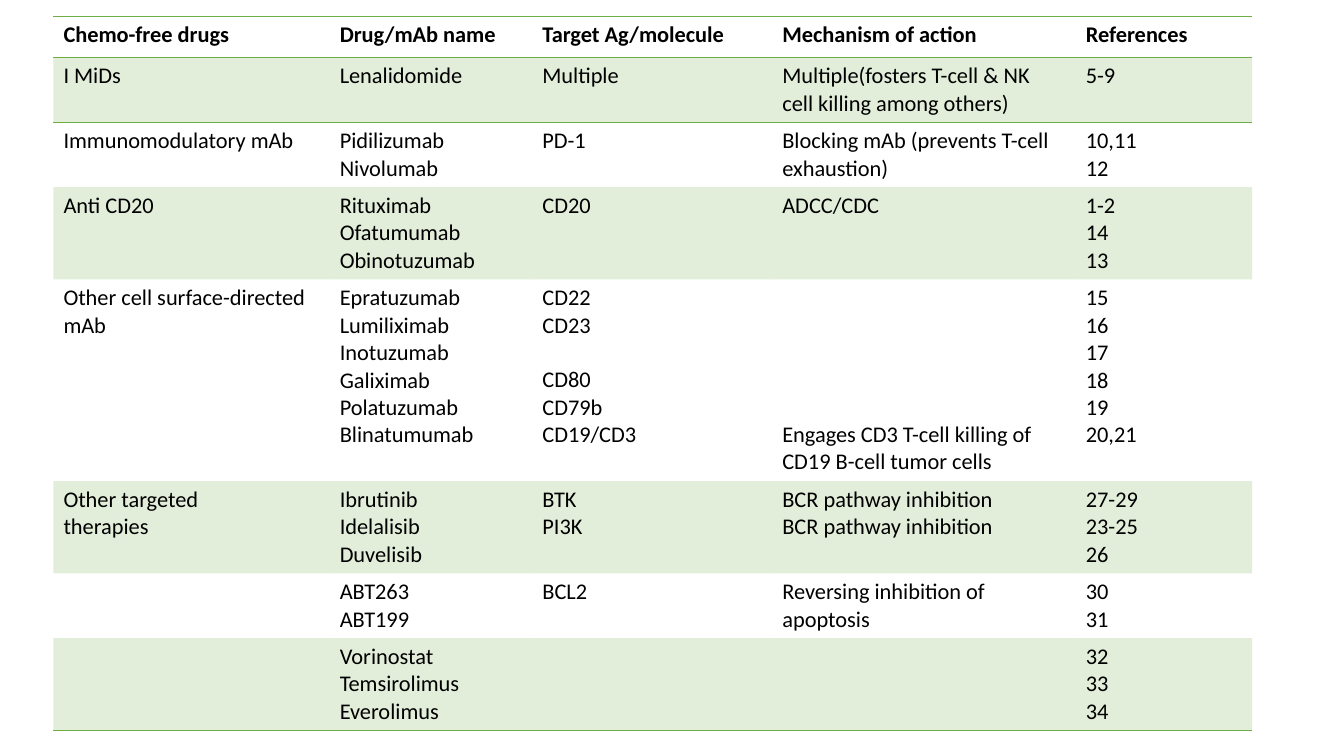
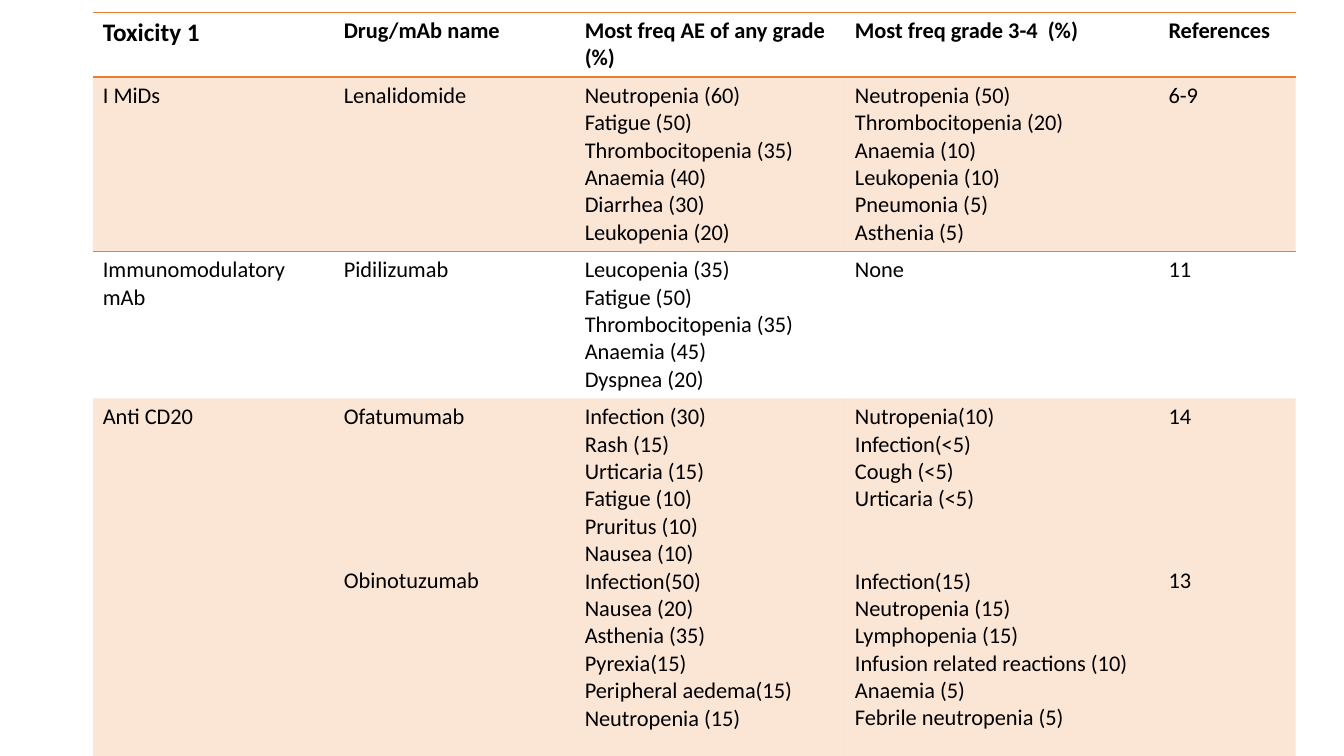
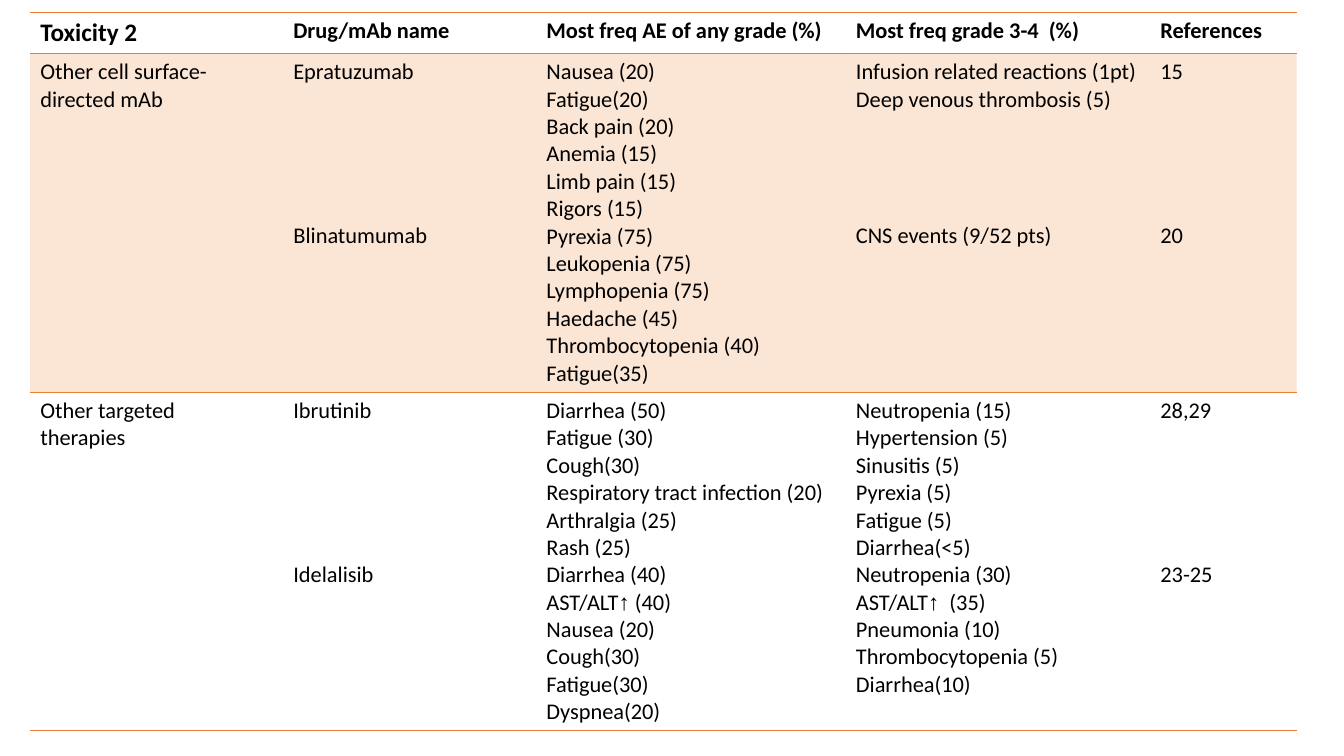
from dataclasses import dataclass

from lxml import etree
from pptx import Presentation
from pptx.dml.color import RGBColor
from pptx.oxml.ns import qn
from pptx.util import Inches, Pt


@dataclass(frozen=True)
class Theme:
    text: str = "000000"
    green: str = "70AD47"
    orange: str = "ED7D31"
    band_alpha: int = 20000
    font: str = "Calibri"
    arrow_font: str = "Arial"
    body_size: int = 16
    heading_size: int = 18
    line_pitch: float = 19.53
    rule_width: int = 1
    cell_margin: float = 0.05
    min_row: float = 0.41
    plain_style: str = "{2D5ABB26-0587-4C30-8999-92F81FD0307C}"


THEME = Theme()
ARROW = "↑"

# Each row is (lines tall, cells); a number inside a cell skips that many lines.
DRUGS = [
    (1, ["Chemo-free drugs", "Drug/mAb name", "Target Ag/molecule",
         "Mechanism of action", "References"]),
    (2, ["I MiDs", "Lenalidomide", "Multiple",
         "Multiple(fosters T-cell & NK cell killing among others)", "5-9"]),
    (2, ["Immunomodulatory mAb", ("Pidilizumab", "Nivolumab"), "PD-1",
         "Blocking mAb (prevents T-cell exhaustion)", ("10,11", "12")]),
    (3, ["Anti CD20", ("Rituximab", "Ofatumumab", "Obinotuzumab"), "CD20",
         "ADCC/CDC", ("1-2", "14", "13")]),
    (7, ["Other cell surface-directed mAb",
         ("Epratuzumab", "Lumiliximab", "Inotuzumab", "Galiximab",
          "Polatuzumab", "Blinatumumab"),
         ("CD22", "CD23", 1, "CD80", "CD79b", "CD19/CD3"),
         (5, "Engages CD3 T-cell killing of CD19 B-cell tumor cells"),
         ("15", "16", "17", "18", "19", "20,21")]),
    (3, [("Other targeted", "therapies"), ("Ibrutinib", "Idelalisib", "Duvelisib"),
         ("BTK", "PI3K"), ("BCR pathway inhibition", "BCR pathway inhibition"),
         ("27-29", "23-25", "26")]),
    (2, ["", ("ABT263", "ABT199"), "BCL2",
         ("Reversing inhibition of", "apoptosis"), ("30", "31")]),
    (3, ["", ("Vorinostat", "Temsirolimus", "Everolimus"), "", "",
         ("32", "33", "34")]),
]

TOXICITY_HEADINGS = ["Drug/mAb name", "Most freq AE of any grade (%)",
                     "Most freq grade 3-4  (%)", "References"]

TOXICITY_1 = [
    (2, ["Toxicity 1", *TOXICITY_HEADINGS]),
    (6, ["I MiDs", "Lenalidomide",
         ("Neutropenia (60)", "Fatigue (50)", "Thrombocitopenia (35)",
          "Anaemia (40)", "Diarrhea (30)", "Leukopenia (20)"),
         ("Neutropenia (50)", "Thrombocitopenia (20)", "Anaemia (10)",
          "Leukopenia (10)", "Pneumonia (5)", "Asthenia (5)"),
         "6-9"]),
    (5, ["Immunomodulatory mAb", "Pidilizumab",
         ("Leucopenia (35)", "Fatigue (50)", "Thrombocitopenia (35)",
          "Anaemia (45)", "Dyspnea (20)"),
         "None", "11"]),
    (13, ["Anti CD20", ("Ofatumumab", 5, "Obinotuzumab"),
          ("Infection (30)", "Rash (15)", "Urticaria (15)", "Fatigue (10)",
           "Pruritus (10)", "Nausea (10)", "Infection(50)", "Nausea (20)",
           "Asthenia (35)", "Pyrexia(15)", "Peripheral aedema(15)",
           "Neutropenia (15)"),
          ("Nutropenia(10)", "Infection(<5)", "Cough (<5)", "Urticaria (<5)", 2,
           "Infection(15)", "Neutropenia (15)", "Lymphopenia (15)",
           "Infusion related reactions (10)", "Anaemia (5)",
           "Febrile neutropenia (5)"),
          ("14", 5, "13")]),
]

TOXICITY_2 = [
    (1, ["Toxicity 2", *TOXICITY_HEADINGS]),
    (12, ["Other cell surface-directed mAb", ("Epratuzumab", 5, "Blinatumumab"),
          ("Nausea (20)", "Fatigue(20)", "Back pain (20)", "Anemia (15)",
           "Limb pain (15)", "Rigors (15)", "Pyrexia (75)", "Leukopenia (75)",
           "Lymphopenia (75)", "Haedache (45)", "Thrombocytopenia (40)",
           "Fatigue(35)"),
          ("Infusion related reactions (1pt)", "Deep venous thrombosis (5)", 4,
           "CNS events (9/52 pts)"),
          ("15", 5, "20")]),
    (12, [("Other targeted", "therapies"), ("Ibrutinib", 5, "Idelalisib"),
          ("Diarrhea (50)", "Fatigue (30)", "Cough(30)",
           "Respiratory tract infection (20)", "Arthralgia (25)", "Rash (25)",
           "Diarrhea (40)", "AST/ALT↑ (40)", "Nausea (20)", "Cough(30)",
           "Fatigue(30)", "Dyspnea(20)"),
          ("Neutropenia (15)", "Hypertension (5)", "Sinusitis (5)",
           "Pyrexia (5)", "Fatigue (5)", "Diarrhea(<5)", "Neutropenia (30)",
           "AST/ALT↑  (35)", "Pneumonia (10)", "Thrombocytopenia (5)",
           "Diarrhea(10)"),
          ("28,29", 5, "23-25")]),
]

SLIDES = [
    dict(rows=DRUGS, left=0.53, top=0.16, accent=THEME.green,
         columns=[2.74, 2.01, 2.38, 3.01, 1.75], corner_size=THEME.body_size),
    dict(rows=TOXICITY_1, left=0.92, top=0.12, accent=THEME.orange,
         columns=[2.39, 2.39, 2.68, 3.11, 1.36], corner_size=THEME.heading_size),
    dict(rows=TOXICITY_2, left=0.3, top=0.12, accent=THEME.orange,
         columns=[2.51, 2.51, 3.07, 3.02, 1.45], corner_size=THEME.heading_size),
]


def row_height(lines):
    return max(THEME.min_row, lines * THEME.line_pitch / 72 + 2 * THEME.cell_margin)


def write_line(paragraph, line, size, bold):
    for part in line.partition(ARROW):
        if part:
            run = paragraph.add_run()
            run.text = part
            run.font.name = THEME.arrow_font if part == ARROW else THEME.font
            run.font.size = Pt(size)
            run.font.bold = bold
            run.font.color.rgb = RGBColor.from_string(THEME.text)


def write_cell(cell, content, size, bold):
    lines = (content,) if isinstance(content, str) else content
    frame = cell.text_frame
    started, skipped = False, 0
    for line in lines:
        if isinstance(line, int):
            skipped = line
            continue
        paragraph = frame.add_paragraph() if started else frame.paragraphs[0]
        gap = Pt(skipped * THEME.line_pitch)
        if skipped and started:
            paragraph.space_before = gap
        elif skipped:
            cell.margin_top = Inches(THEME.cell_margin) + gap
        write_line(paragraph, line, size, bold)
        started, skipped = True, 0


def paint_band(cell, accent):
    cell.fill.solid()
    cell.fill.fore_color.rgb = RGBColor.from_string(accent)
    color = cell._tc.tcPr.find(".//" + qn("a:srgbClr"))
    etree.SubElement(color, qn("a:alpha"), val=str(THEME.band_alpha))


def draw_rules(cell, accent, sides):
    properties = cell._tc.get_or_add_tcPr()
    for position, side in enumerate(sides):
        rule = etree.Element(qn("a:ln" + side), w=str(Pt(THEME.rule_width)))
        fill = etree.SubElement(rule, qn("a:solidFill"))
        etree.SubElement(fill, qn("a:srgbClr"), val=accent)
        properties.insert(position, rule)


def add_drug_table(slide, rows, left, top, accent, columns, corner_size):
    heights = [row_height(lines) for lines, _ in rows]
    table = slide.shapes.add_table(
        len(rows), len(columns), Inches(left), Inches(top),
        Inches(sum(columns)), Inches(sum(heights))).table
    table.horz_banding = False
    table._tbl.tblPr.find(qn("a:tableStyleId")).text = THEME.plain_style
    for column, width in zip(table.columns, columns):
        column.width = Inches(width)
    for r, (height, (_, contents)) in enumerate(zip(heights, rows)):
        table.rows[r].height = Inches(height)
        heading = r == 0
        for c, content in enumerate(contents):
            cell = table.cell(r, c)
            size = corner_size if heading and c == 0 else THEME.body_size
            write_cell(cell, content, size, heading)
            if r % 2:
                paint_band(cell, accent)
            else:
                cell.fill.background()
            if heading:
                draw_rules(cell, accent, "TB")
            elif r == 1:
                draw_rules(cell, accent, "T")
            elif r == len(rows) - 1:
                draw_rules(cell, accent, "B")


def main():
    deck = Presentation()
    deck.slide_width, deck.slide_height = Inches(13.33), Inches(7.5)
    blank = deck.slide_layouts[6]
    for content in SLIDES:
        add_drug_table(deck.slides.add_slide(blank), **content)
    deck.save("out.pptx")


if __name__ == "__main__":
    main()
